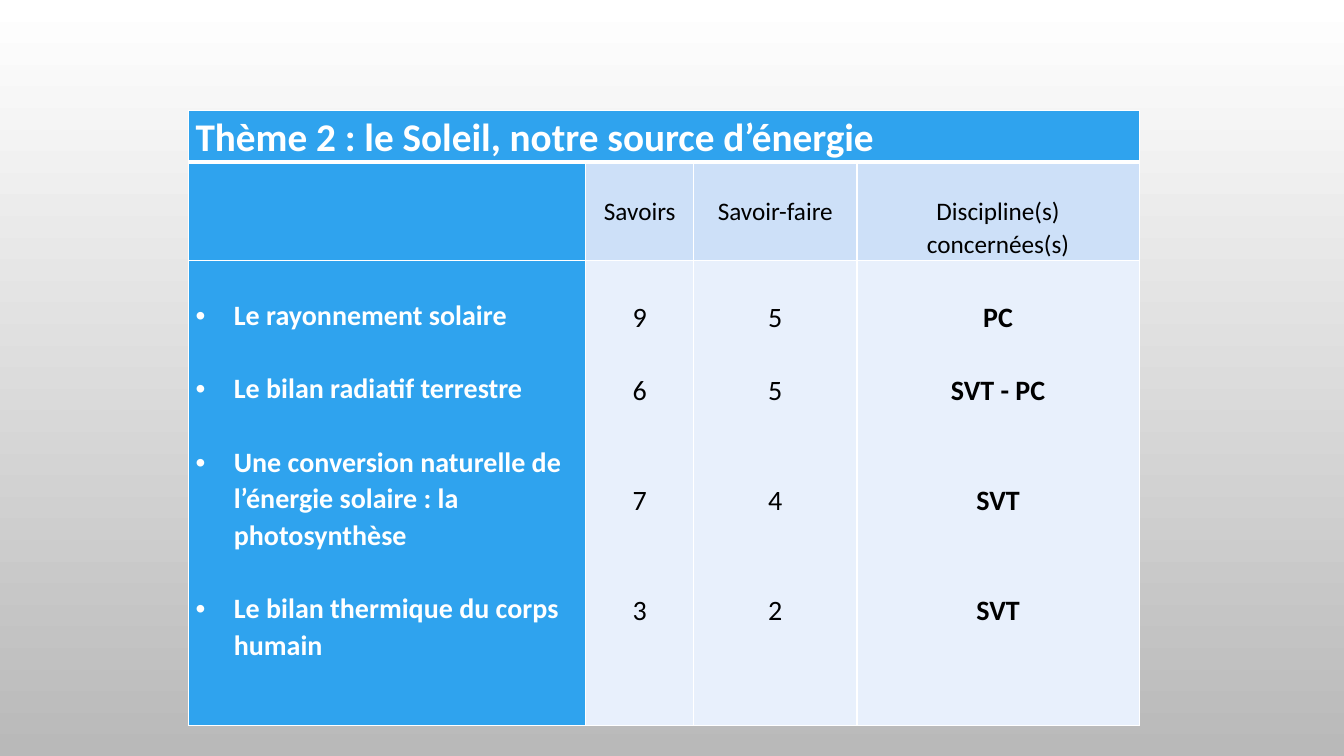
from dataclasses import dataclass

from lxml.etree import SubElement
from pptx import Presentation
from pptx.dml.color import RGBColor
from pptx.enum.text import PP_ALIGN
from pptx.oxml.ns import qn
from pptx.table import _Cell
from pptx.util import Inches, Pt

WHITE = RGBColor(0xFF, 0xFF, 0xFF)
BLACK = RGBColor(0, 0, 0)
GRAY = RGBColor(0xB9, 0xB9, 0xB9)
BLUE = RGBColor(0x2F, 0xA3, 0xEE)
HEADER_BLUE = RGBColor(0xCD, 0xE0, 0xF8)
BODY_BLUE = RGBColor(0xE8, 0xF0, 0xFC)

FONT = "Calibri"
LINE_SPACING = 1.07
BLANK_LINE = 26.1  # height in points of one 20 pt line
COLUMN_WIDTHS = (3.94, 1.07, 1.62, 2.8)
ROW_HEIGHTS = (0.48, 0.97, 4.62)


@dataclass(frozen=True)
class Topic:
    name: str
    knowledge: int
    skills: int
    subjects: str
    lines_before: int  # blank lines above its values


TITLE = "Thème 2 : le Soleil, notre source d’énergie"
HEADERS = ("Savoirs", "Savoir-faire", "Discipline(s) concernées(s)")
TOPICS = (
    Topic("Le rayonnement solaire", 9, 5, "PC", 0),
    Topic("Le bilan radiatif terrestre", 6, 5, "SVT - PC", 1),
    Topic("Une conversion naturelle de l’énergie solaire : la photosynthèse",
          7, 4, "SVT", 2),
    Topic("Le bilan thermique du corps humain", 3, 2, "SVT", 2),
)


def style_cell(cell: _Cell, fill: RGBColor, top: float = 0, bottom_line: float = 1) -> None:
    """Set margins, white borders and fill."""
    cell.margin_left = cell.margin_right = Inches(0.07)
    cell.margin_top, cell.margin_bottom = Inches(top), Inches(0)
    tcPr = cell._tc.get_or_add_tcPr()
    for side, width in (("L", 1), ("R", 1), ("T", 1), ("B", bottom_line)):
        ln = SubElement(tcPr, qn(f"a:ln{side}"), w=str(Pt(width)))
        solid = SubElement(ln, qn("a:solidFill"))
        SubElement(solid, qn("a:srgbClr"), val=str(WHITE))
    cell.fill.solid()
    cell.fill.fore_color.rgb = fill


def add_text(cell: _Cell, text: str, *, size: float = 20, color: RGBColor = BLACK,
             bold: bool = False, align: PP_ALIGN = PP_ALIGN.CENTER,
             before: float = 0, bullet: bool = False) -> None:
    """Write text in the cell's first paragraph, or in a new one if that is taken."""
    tf = cell.text_frame
    p = tf.paragraphs[0] if not tf.text else tf.add_paragraph()
    p.alignment = align
    p.line_spacing = LINE_SPACING
    p.space_before = Pt(before)
    if bullet:
        pPr = p._p.get_or_add_pPr()
        pPr.set("marL", str(Inches(0.38)))
        pPr.set("indent", str(Inches(-0.38)))
        SubElement(pPr, qn("a:buFont"), typeface="Arial")
        SubElement(pPr, qn("a:buChar"), char="•")
    r = p.add_run()
    r.text = text
    r.font.name, r.font.size, r.font.bold = FONT, Pt(size), bold
    r.font.color.rgb = color


def main() -> None:
    prs = Presentation()
    prs.slide_width, prs.slide_height = Inches(13.33), Inches(7.5)
    s = prs.slides.add_slide(prs.slide_layouts[6])

    background = s.background.fill
    background.gradient()
    background.gradient_angle = 270
    for stop, color, position in zip(background.gradient_stops, (WHITE, GRAY), (0, 1)):
        stop.color.rgb = color
        stop.position = position

    table = s.shapes.add_table(len(ROW_HEIGHTS), len(COLUMN_WIDTHS), Inches(1.87), Inches(1.1),
                               Inches(sum(COLUMN_WIDTHS)), Inches(sum(ROW_HEIGHTS))).table
    table.first_row = table.horz_banding = False
    for column, width in zip(table.columns, COLUMN_WIDTHS):
        column.width = Inches(width)
    for row, height in zip(table.rows, ROW_HEIGHTS):
        row.height = Inches(height)

    for cell in table.rows[0].cells:
        style_cell(cell, BLUE, bottom_line=3)
    title = table.cell(0, 0)
    title.merge(table.cell(0, len(COLUMN_WIDTHS) - 1))
    add_text(title, TITLE, size=28, color=WHITE, bold=True, align=PP_ALIGN.LEFT)

    style_cell(table.cell(1, 0), BLUE)
    for col, header in enumerate(HEADERS, start=1):
        cell = table.cell(1, col)
        style_cell(cell, HEADER_BLUE, top=0.32)
        add_text(cell, header, size=18)

    names, *values = table.rows[2].cells
    style_cell(names, BLUE, top=0.36)
    for cell in values:
        style_cell(cell, BODY_BLUE, top=0.38)
    for topic in TOPICS:
        add_text(names, topic.name, color=WHITE, bold=True, align=PP_ALIGN.LEFT, bullet=True,
                 before=BLANK_LINE if topic.lines_before else 0)
        gap = topic.lines_before * BLANK_LINE
        for cell, value in zip(values, (topic.knowledge, topic.skills, topic.subjects)):
            add_text(cell, str(value), bold=value == topic.subjects, before=gap)

    prs.save("out.pptx")


if __name__ == "__main__":
    main()
